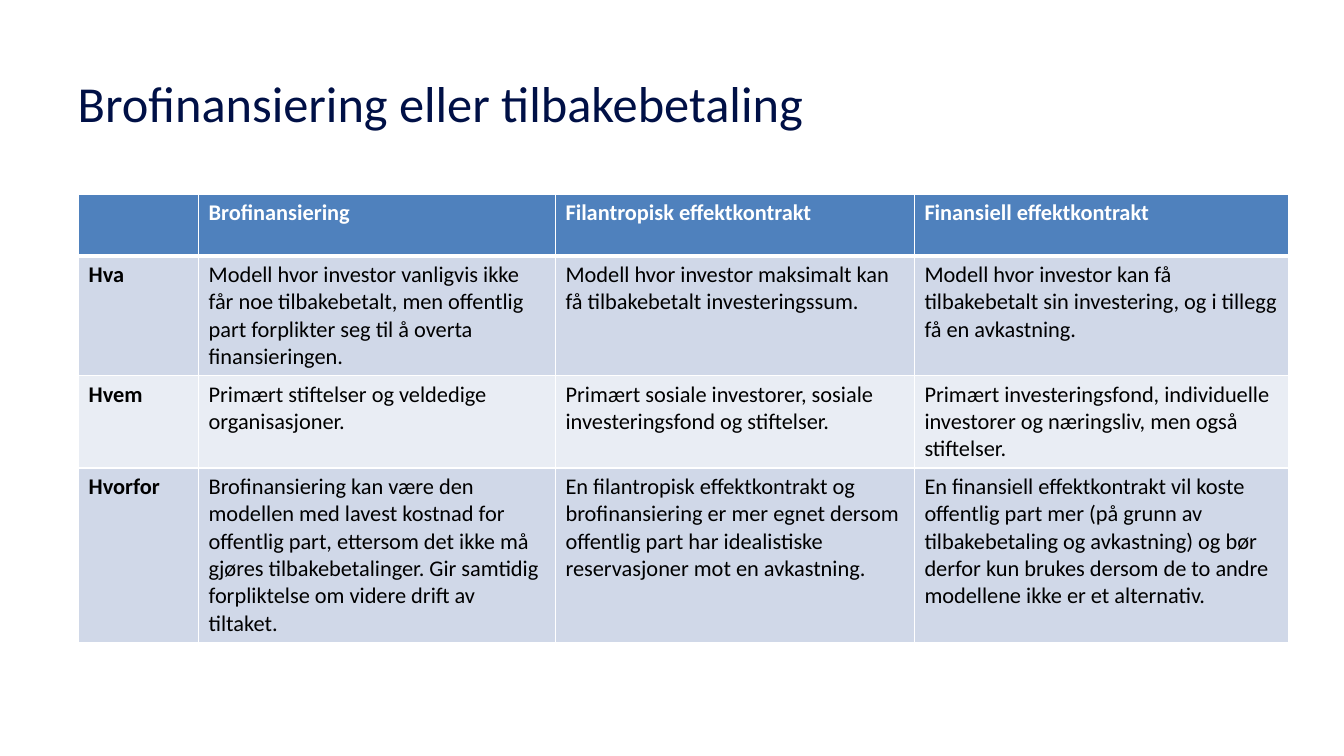
"""Build a slide with a table comparing three financing models."""
from dataclasses import dataclass

from lxml.etree import SubElement
from pptx import Presentation
from pptx.dml.color import RGBColor as RGB
from pptx.enum.text import MSO_ANCHOR as Anchor, MSO_AUTO_SIZE as AutoSize, PP_ALIGN as Align
from pptx.oxml.ns import qn
from pptx.util import Pt

PX = 9144


@dataclass(frozen=True)
class Theme:
    font: str = "Calibri"
    title_size: int = 36
    cell_size: int = 16
    title: str = "001046"
    header: str = "4F81BD"
    bands: tuple[str, str] = ("D0D8E8", "E9EDF4")
    light: str = "FFFFFF"
    dark: str = "000000"
    line: int = 1
    header_line: int = 3


@dataclass(frozen=True)
class Row:
    height: int
    cells: tuple[str, str, str, str]


T = Theme()
COLUMNS = (119, 354, 356, 371)
ROWS = (
    Row(61, ("", "Brofinansiering", "Filantropisk effektkontrakt", "Finansiell effektkontrakt")),
    Row(118, (
        "Hva",
        "Modell hvor investor vanligvis ikke får noe tilbakebetalt, men offentlig part "
        "forplikter seg til å overta finansieringen.",
        "Modell hvor investor maksimalt kan få tilbakebetalt investeringssum.",
        "Modell hvor investor kan få tilbakebetalt sin investering, og i tillegg få en avkastning.",
    )),
    Row(91, (
        "Hvem",
        "Primært stiftelser og veldedige organisasjoner.",
        "Primært sosiale investorer, sosiale investeringsfond og stiftelser.",
        "Primært investeringsfond, individuelle investorer og næringsliv, men også stiftelser.",
    )),
    Row(172, (
        "Hvorfor",
        "Brofinansiering kan være den modellen med lavest kostnad for offentlig part, ettersom "
        "det ikke må gjøres tilbakebetalinger. Gir samtidig forpliktelse om videre drift av tiltaket.",
        "En filantropisk effektkontrakt og brofinansiering er mer egnet dersom offentlig part har "
        "idealistiske reservasjoner mot en avkastning.",
        "En finansiell effektkontrakt vil koste offentlig part mer (på grunn av tilbakebetaling og "
        "avkastning) og bør derfor kun brukes dersom de to andre modellene ikke er et alternativ.",
    )),
)


def write(tf, text: str, *, size: int, color: str, bold: bool = False) -> None:
    """Write one left-aligned paragraph in the theme font."""
    p = tf.paragraphs[0]
    p.alignment = Align.LEFT
    p.font.size = Pt(size)
    if text:
        r = p.add_run()
        r.text = text
        r.font.name, r.font.size, r.font.bold = T.font, Pt(size), bold
        r.font.color.rgb = RGB.from_string(color)


def add_borders(cell, *, top: int, bottom: int) -> None:
    """Draw the light lines around a cell, with widths in points."""
    tcPr = cell._tc.get_or_add_tcPr()
    for side, width in {"L": T.line, "R": T.line, "T": top, "B": bottom}.items():
        ln = SubElement(tcPr, qn(f"a:ln{side}"), w=str(Pt(width)))
        SubElement(SubElement(ln, qn("a:solidFill")), qn("a:srgbClr"), val=T.light)


def add_title(s, text: str) -> None:
    """Place and format the title placeholder."""
    sp = s.shapes.title
    sp.left, sp.top, sp.width, sp.height = (v * PX for v in (67, 40, 1200, 124))
    tf = sp.text_frame
    tf.word_wrap, tf.auto_size, tf.vertical_anchor = True, AutoSize.NONE, Anchor.MIDDLE
    write(tf, text, size=T.title_size, color=T.title)


def add_comparison(s, left: int, top: int) -> None:
    """Add the table with its header row and banded body."""
    size = sum(COLUMNS) * PX, sum(row.height for row in ROWS) * PX
    table = s.shapes.add_table(len(ROWS), len(COLUMNS), left * PX, top * PX, *size).table
    for column, width in zip(table.columns, COLUMNS):
        column.width = width * PX
    for i, row in enumerate(ROWS):
        table.rows[i].height = row.height * PX
        header = i == 0
        fill = T.header if header else T.bands[(i - 1) % 2]
        for j, text in enumerate(row.cells):
            cell = table.cell(i, j)
            add_borders(cell, top=T.header_line if i == 1 else T.line,
                        bottom=T.header_line if header else T.line)
            cell.fill.solid()
            cell.fill.fore_color.rgb = RGB.from_string(fill)
            write(cell.text_frame, text, size=T.cell_size,
                  color=T.light if header else T.dark, bold=header or j == 0)


def main() -> None:
    """Build and save the slide."""
    prs = Presentation()
    prs.slide_width, prs.slide_height = 1333 * PX, 750 * PX
    s = prs.slides.add_slide(prs.slide_layouts[5])
    add_title(s, "Brofinansiering eller tilbakebetaling")
    add_comparison(s, 78, 193)
    prs.save("out.pptx")


if __name__ == "__main__":
    main()
